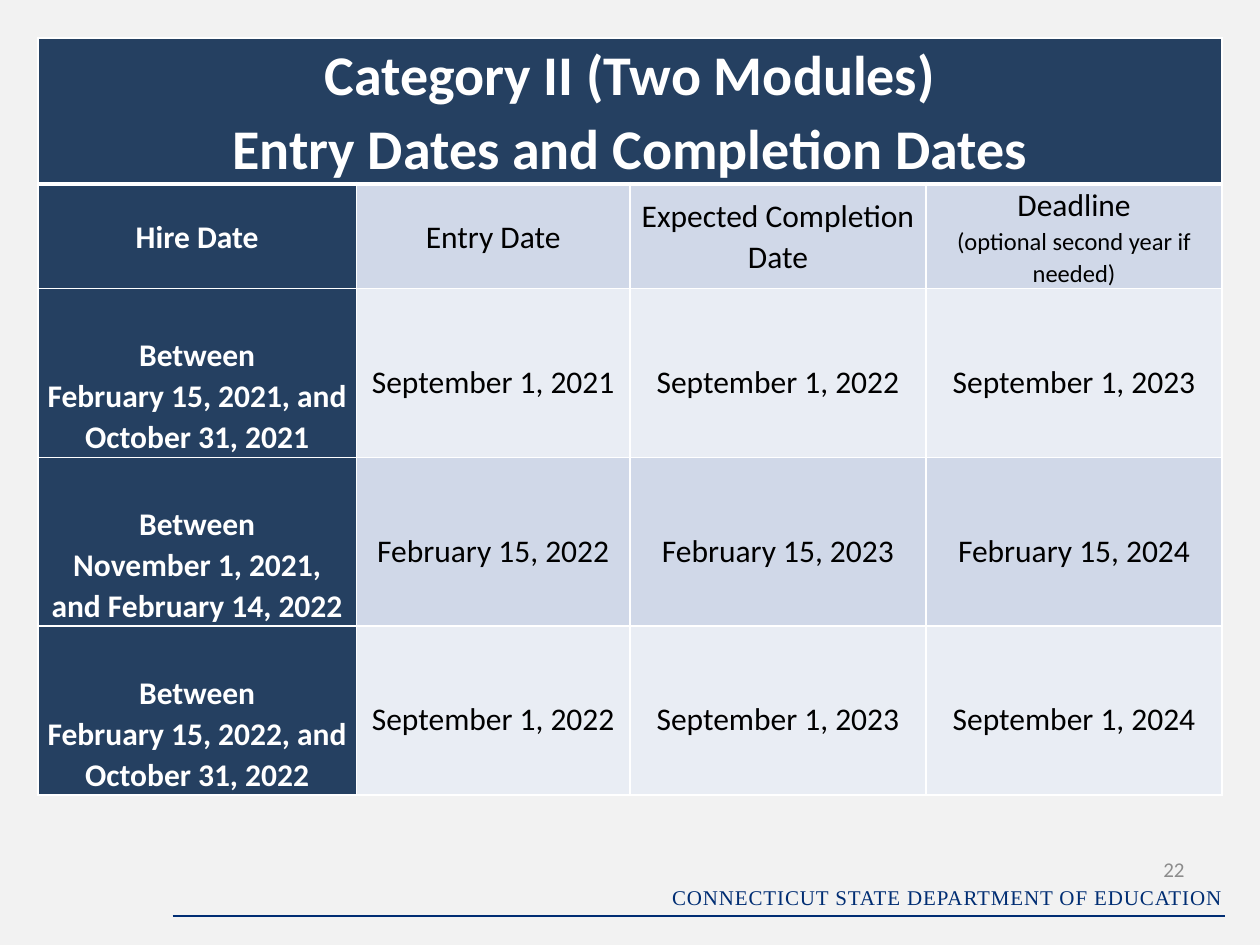
from lxml import etree
from pptx import Presentation
from pptx.dml.color import RGBColor
from pptx.enum import shapes, text
from pptx.oxml import ns
from pptx.util import Inches, Pt

COLORS = {
    "background": "F2F2F2",
    "navy": "254061",
    "band_dark": "D0D8E8",
    "band_light": "E9EDF4",
    "white": "FFFFFF",
    "black": "000000",
    "footer": "002D73",
    "number": "8C8C8C",
}
COLUMN_WIDTHS = [2.53, 2.17, 2.35, 2.35]
ROW_HEIGHTS = [1.16, 0.83, 1.34, 1.34, 1.34]
TITLE = ["Category II (Two Modules)", "Entry Dates and Completion Dates"]
HEADINGS = [
    ["Hire Date"],
    ["Entry Date"],
    ["Expected Completion Date"],
    ["Deadline", "(optional second year if needed)"],
]
HIRE_PERIODS = [
    ("February 15, 2021, and October 31, 2021", "September 1", 2021),
    ("November 1, 2021, and February 14, 2022", "February 15", 2022),
    ("February 15, 2022, and October 31, 2022", "September 1", 2022),
]


def color(name):
    return RGBColor.from_string(COLORS[name])


def style_font(font, size, color_name, bold=False, family="Calibri"):
    font.name = family
    font.size = Pt(size)
    font.bold = bold
    font.color.rgb = color(color_name)


def draw_borders(cell, top=1, bottom=1):
    properties = cell._tc.get_or_add_tcPr()
    for side, width in (("L", 1), ("R", 1), ("T", top), ("B", bottom)):
        border = etree.SubElement(properties, ns.qn(f"a:ln{side}"), w=str(Pt(width)))
        fill = etree.SubElement(border, ns.qn("a:solidFill"))
        etree.SubElement(fill, ns.qn("a:srgbClr"), val=COLORS["white"])


def fill_cell(cell, lines, fill, anchor=text.MSO_ANCHOR.MIDDLE, sizes=(18, 18), spacing=1.07):
    cell.margin_left = cell.margin_right = Inches(0.07)
    cell.margin_top = cell.margin_bottom = 0
    cell.vertical_anchor = anchor
    cell.fill.solid()
    cell.fill.fore_color.rgb = color(fill)
    cell.text_frame.text = "\n".join(lines)
    on_navy = fill == "navy"
    for paragraph, size in zip(cell.text_frame.paragraphs, sizes):
        paragraph.alignment = text.PP_ALIGN.CENTER
        paragraph.line_spacing = spacing
        style_font(paragraph.font, size, "white" if on_navy else "black", on_navy)


def add_dates_table(slide, left, top, width, height):
    table = slide.shapes.add_table(
        len(ROW_HEIGHTS), len(COLUMN_WIDTHS),
        Inches(left), Inches(top), Inches(width), Inches(height),
    ).table
    for column, column_width in zip(table.columns, COLUMN_WIDTHS):
        column.width = Inches(column_width)
    for index, (row, row_height) in enumerate(zip(table.rows, ROW_HEIGHTS)):
        row.height = Inches(row_height)
        for cell in row.cells:
            draw_borders(cell, top=3 if index == 1 else 1, bottom=3 if index == 0 else 1)

    title = table.cell(0, 0)
    title.merge(table.cell(0, len(COLUMN_WIDTHS) - 1))
    fill_cell(title, TITLE, "navy", text.MSO_ANCHOR.TOP, (32, 32))

    for index, heading in enumerate(HEADINGS):
        fill_cell(table.cell(1, index), heading, "band_dark" if index else "navy", sizes=(18, 14))

    for row, (period, day, entry_year) in enumerate(HIRE_PERIODS, start=2):
        fill_cell(table.cell(row, 0), ["Between", period], "navy", text.MSO_ANCHOR.BOTTOM)
        band = "band_dark" if row % 2 else "band_light"
        for offset in range(3):
            date = f"{day}, {entry_year + offset}"
            fill_cell(table.cell(row, offset + 1), [date], band, spacing=1.5)


def add_right_text(slide, words, left, top, width, height, color_name, family, anchor):
    frame = slide.shapes.add_textbox(
        Inches(left), Inches(top), Inches(width), Inches(height)
    ).text_frame
    frame.word_wrap = True
    frame.vertical_anchor = anchor
    paragraph = frame.paragraphs[0]
    paragraph.alignment = text.PP_ALIGN.RIGHT
    paragraph.add_run().text = words
    style_font(paragraph.font, 12, color_name, family=family)
    return frame


def add_footer(slide, left, top, width):
    rule_top = Inches(top + 0.57)
    rule = slide.shapes.add_connector(
        shapes.MSO_CONNECTOR.STRAIGHT,
        Inches(left), rule_top, Inches(left + width), rule_top,
    )
    rule.line.color.rgb = color("footer")
    rule.line.width = Pt(0.75)
    etree.SubElement(rule._element.spPr, ns.qn("a:effectLst"))

    department = add_right_text(
        slide, "CONNECTICUT STATE DEPARTMENT OF EDUCATION",
        left + 3.81, top + 0.27, 4.62, 0.3,
        "footer", "Times New Roman", text.MSO_ANCHOR.TOP,
    )
    department.auto_size = text.MSO_AUTO_SIZE.SHAPE_TO_FIT_TEXT
    department.paragraphs[0].runs[0]._r.get_or_add_rPr().set("spc", "50")

    add_right_text(
        slide, "22", left + 7.6, top, 0.53, 0.4,
        "number", "Calibri", text.MSO_ANCHOR.MIDDLE,
    )


def main():
    deck = Presentation()
    deck.slide_width = Inches(10)
    deck.slide_height = Inches(7.5)
    slide = deck.slides.add_slide(deck.slide_layouts[6])
    slide.background.fill.solid()
    slide.background.fill.fore_color.rgb = color("background")
    add_footer(slide, 1.37, 6.7, 8.35)
    add_dates_table(slide, 0.3, 0.3, 9.4, 6)
    deck.save("out.pptx")


if __name__ == "__main__":
    main()
